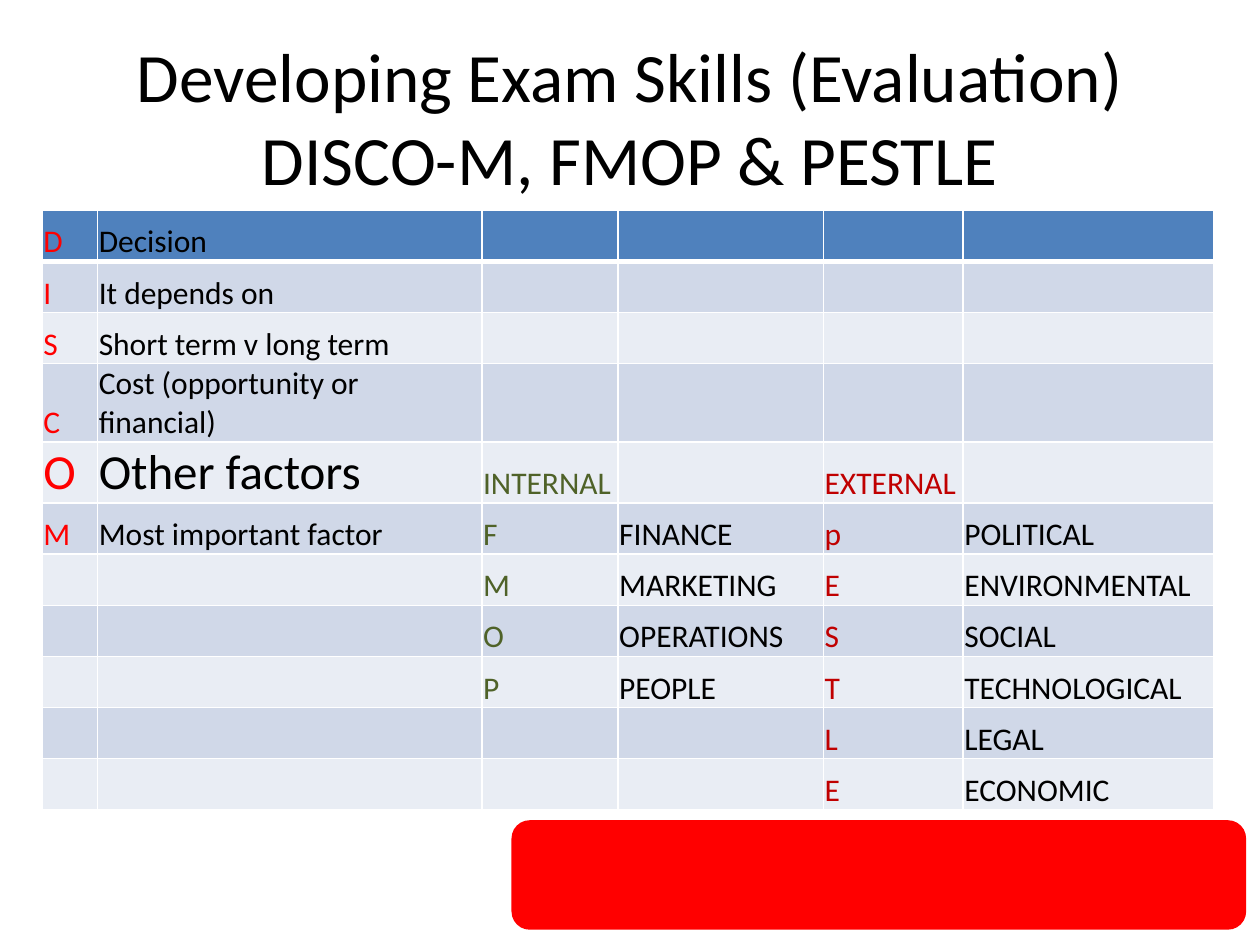
from lxml.etree import SubElement
from pptx import Presentation
from pptx.dml.color import RGBColor
from pptx.enum.shapes import MSO_SHAPE
from pptx.enum.text import MSO_ANCHOR, MSO_AUTO_SIZE, PP_ALIGN
from pptx.oxml.ns import qn
from pptx.util import Pt

BLACK = RGBColor(0x00, 0x00, 0x00)
WHITE = RGBColor(0xFF, 0xFF, 0xFF)
RED = RGBColor(0xFF, 0x00, 0x00)
GREEN = RGBColor(0x4F, 0x62, 0x28)
DARK_RED = RGBColor(0xC0, 0x00, 0x00)
HEADER_BLUE = RGBColor(0x4F, 0x81, 0xBD)
BAND_DARK = RGBColor(0xD0, 0xD8, 0xE8)
BAND_LIGHT = RGBColor(0xE9, 0xED, 0xF4)

COLUMN_WIDTHS = [31.7, 219.6, 77.8, 117.4, 79.9, 143.2]
COLUMN_COLORS = [RED, BLACK, GREEN, BLACK, DARK_RED, BLACK]
ROW_HEIGHT = 29.2
TALL_ROWS = {3: 44.6, 4: 34.8}
FACTORS_ROW = 4

SKILLS = [
    ("D", "Decision", "", "", "", ""),
    ("I", "It depends on", "", "", "", ""),
    ("S", "Short term v long term", "", "", "", ""),
    ("C", "Cost (opportunity or financial)", "", "", "", ""),
    ("O", "Other factors", "INTERNAL", "", "EXTERNAL", ""),
    ("M", "Most important factor", "F", "FINANCE", "p", "POLITICAL"),
    ("", "", "M", "MARKETING", "E", "ENVIRONMENTAL"),
    ("", "", "O", "OPERATIONS", "S", "SOCIAL"),
    ("", "", "P", "PEOPLE", "T", "TECHNOLOGICAL"),
    ("", "", "", "", "L", "LEGAL"),
    ("", "", "", "", "E", "ECONOMIC"),
]


def write_text(frame, text, size=18, color=BLACK, align=PP_ALIGN.LEFT):
    paragraph = frame.paragraphs[0]
    paragraph.alignment = align
    run = paragraph.add_run()
    run.text = text
    run.font.name = "Calibri"
    run.font.size = Pt(size)
    run.font.color.rgb = color


def set_borders(cell, bottom_width=1):
    properties = cell._tc.get_or_add_tcPr()
    widths = {"a:lnL": 1, "a:lnR": 1, "a:lnT": 1, "a:lnB": bottom_width}
    for position, (tag, width) in enumerate(widths.items()):
        line = SubElement(properties, qn(tag), w=str(Pt(width)))
        fill = SubElement(line, qn("a:solidFill"))
        SubElement(fill, qn("a:srgbClr"), val=str(WHITE))
        properties.insert(position, line)  # borders come before the fill


def add_title(slide, text):
    title = slide.shapes.title
    title.left, title.top, title.width, title.height = Pt(36), Pt(21.6), Pt(648), Pt(90)
    frame = title.text_frame
    frame.word_wrap = True
    frame.auto_size = MSO_AUTO_SIZE.NONE
    frame.vertical_anchor = MSO_ANCHOR.MIDDLE
    write_text(frame, text, size=39.6, align=PP_ALIGN.CENTER)


def add_red_panel(slide):
    panel = slide.shapes.add_shape(
        MSO_SHAPE.ROUNDED_RECTANGLE, Pt(292.3), Pt(468.7), Pt(419.8), Pt(62.6))
    panel.shadow.inherit = False
    panel.fill.solid()
    panel.fill.fore_color.rgb = RED
    panel.line.fill.background()


def format_cell(cell, text, row, column):
    cell.fill.solid()
    band = BAND_DARK if row % 2 else BAND_LIGHT
    cell.fill.fore_color.rgb = HEADER_BLUE if row == 0 else band
    set_borders(cell, bottom_width=3 if row == 0 else 1)
    if text:
        cell.vertical_anchor = MSO_ANCHOR.BOTTOM
        cell.margin_left = cell.margin_right = cell.margin_top = Pt(0.75)
        cell.margin_bottom = 0
        emphasised = row == FACTORS_ROW and column < 2
        write_text(cell.text_frame, text, size=28 if emphasised else 18,
                   color=COLUMN_COLORS[column])


def add_skills_table(slide):
    heights = [TALL_ROWS.get(row, ROW_HEIGHT) for row in range(len(SKILLS))]
    table = slide.shapes.add_table(
        len(SKILLS), len(COLUMN_WIDTHS), Pt(24), Pt(120.2),
        Pt(sum(COLUMN_WIDTHS)), Pt(sum(heights))).table
    for column, width in zip(table.columns, COLUMN_WIDTHS):
        column.width = Pt(width)
    for row, height in zip(table.rows, heights):
        row.height = Pt(height)
    for row, texts in enumerate(SKILLS):
        for column, text in enumerate(texts):
            format_cell(table.cell(row, column), text, row, column)


def main():
    presentation = Presentation()
    presentation.slide_width, presentation.slide_height = Pt(720), Pt(540)
    slide = presentation.slides.add_slide(presentation.slide_layouts[5])
    add_red_panel(slide)
    add_title(slide, "Developing Exam Skills (Evaluation) DISCO-M, FMOP & PESTLE")
    add_skills_table(slide)
    presentation.save("out.pptx")


if __name__ == "__main__":
    main()
